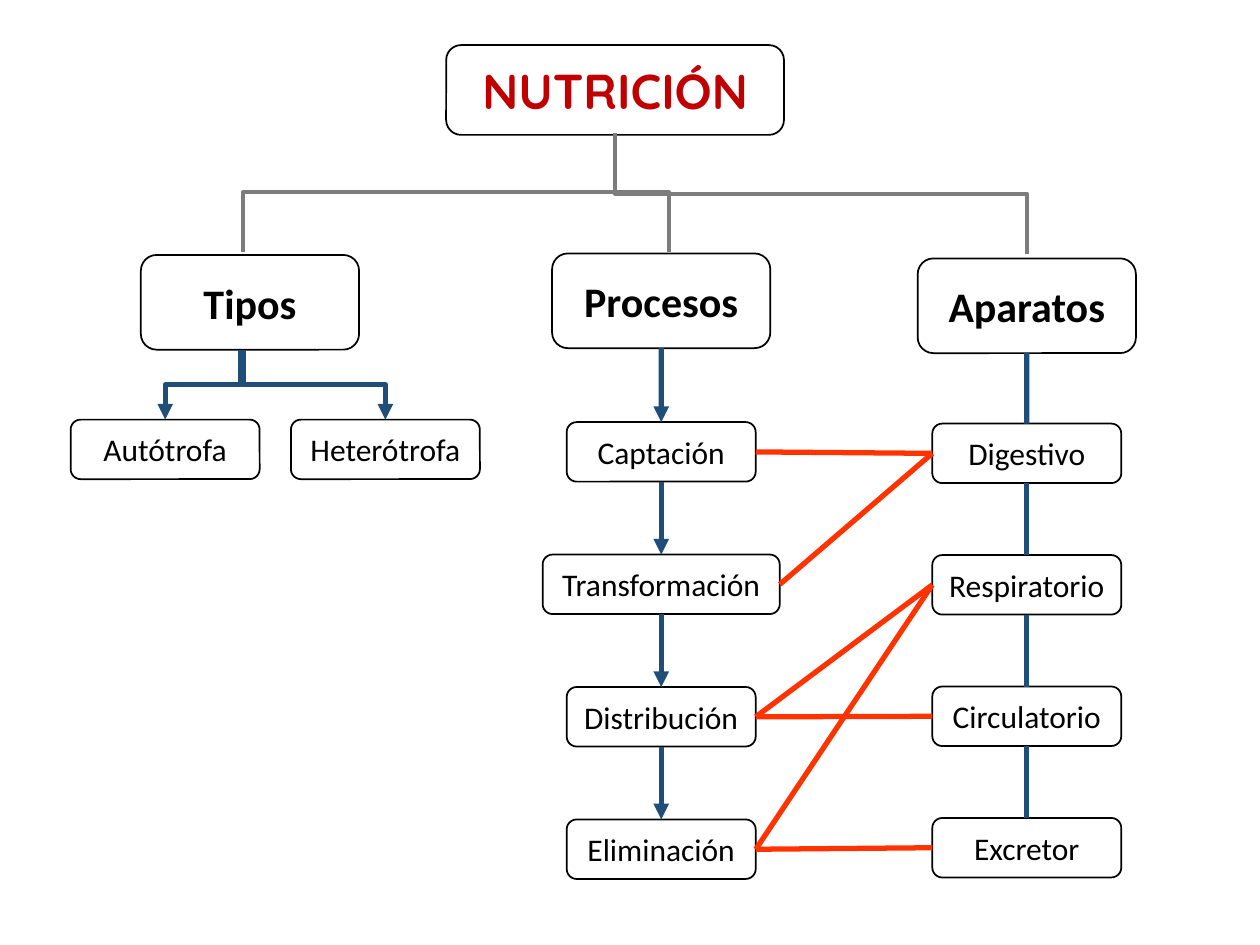
from dataclasses import dataclass
from itertools import pairwise

from lxml import etree
from pptx import Presentation
from pptx.dml.color import RGBColor
from pptx.enum.shapes import MSO_CONNECTOR, MSO_SHAPE
from pptx.enum.text import MSO_ANCHOR, PP_ALIGN
from pptx.oxml.ns import qn
from pptx.util import Cm, Pt

ROUNDED = MSO_SHAPE.ROUNDED_RECTANGLE
STRAIGHT, ELBOW = MSO_CONNECTOR.STRAIGHT, MSO_CONNECTOR.ELBOW
CENTER, MIDDLE = PP_ALIGN.CENTER, MSO_ANCHOR.MIDDLE


@dataclass(frozen=True)
class Theme:
    white: RGBColor = RGBColor.from_string("FFFFFF")
    black: RGBColor = RGBColor.from_string("000000")
    title: RGBColor = RGBColor.from_string("C00000")
    tree: RGBColor = RGBColor.from_string("7C7C7C")
    flow: RGBColor = RGBColor.from_string("1F4E79")
    relation: RGBColor = RGBColor.from_string("FF3300")
    title_font: str = "Quicksand"
    font: str = "Calibri"
    title_size: Pt = Pt(28)
    head_size: Pt = Pt(24)
    item_size: Pt = Pt(18)
    outline: Pt = Pt(1)
    thin: Pt = Pt(2.25)
    thick: Pt = Pt(3)


THEME = Theme()


def add_box(s, text, center, top, width=3.81, height=1.2, *, size=THEME.item_size,
            font=THEME.font, color=THEME.black, bold=False):
    """Rounded box centred on a column; lengths in centimetres."""
    sp = s.shapes.add_shape(ROUNDED, Cm(center - width / 2), Cm(top), Cm(width), Cm(height))
    sp.shadow.inherit = False
    sp.fill.solid()
    sp.fill.fore_color.rgb = THEME.white
    sp.line.color.rgb = THEME.black
    sp.line.width = THEME.outline
    tf = sp.text_frame
    tf.word_wrap = True
    tf.vertical_anchor = MIDDLE
    p = tf.paragraphs[0]
    p.alignment = CENTER
    r = p.add_run()
    r.text = text
    r.font.name, r.font.size, r.font.bold = font, size, bold
    r.font.color.rgb = color
    return sp


def add_head(s, text, center, top):
    return add_box(s, text, center, top, 4.4, 1.91, size=THEME.head_size, bold=True)


def style_line(c, color, width, arrow):
    c.line.color.rgb = color
    c.line.width = width
    if arrow:
        etree.SubElement(c.line._get_or_add_ln(), qn("a:tailEnd"), type="triangle")
    etree.SubElement(c._element.spPr, qn("a:effectLst"))


def add_line(s, start, end, color=THEME.flow, arrow=False):
    c = s.shapes.add_connector(STRAIGHT, *start, *end)
    style_line(c, color, THEME.thick, arrow)


def add_elbow(s, start, end, color, width, arrow=False):
    """Bent line that leaves and arrives vertically: a turned elbow connector."""
    (x1, y1), (x2, y2) = start, end
    drop, span = y2 - y1, abs(x2 - x1)
    left, top = (x1 + x2 - drop) // 2, (y1 + y2 - span) // 2
    to_right = x2 > x1
    near, far = (left + drop, left) if to_right else (left, left + drop)
    c = s.shapes.add_connector(ELBOW, near, top, far, top + span)
    c._element.spPr.get_or_add_xfrm().set("rot", str((270 if to_right else 90) * 60000))
    style_line(c, color, width, arrow)


def top_of(sp):
    return sp.left + sp.width // 2, sp.top


def bottom_of(sp):
    return sp.left + sp.width // 2, sp.top + sp.height


def left_of(sp):
    return sp.left, sp.top + sp.height // 2


def right_of(sp):
    return sp.left + sp.width, sp.top + sp.height // 2


def main():
    prs = Presentation()
    prs.slide_width, prs.slide_height = Cm(25.4), Cm(19.05)
    s = prs.slides.add_slide(prs.slide_layouts[6])

    # Title and the three branches
    title = add_box(s, "NUTRICIÓN", 12.4, 0.91, 6.81, 1.81, size=THEME.title_size,
                    font=THEME.title_font, color=THEME.title, bold=True)
    types = add_head(s, "Tipos", 5.04, 5.14)
    processes = add_head(s, "Procesos", 13.33, 5.11)
    systems = add_head(s, "Aparatos", 20.7, 5.21)
    for x, y in ((4.9, 5.08), (13.49, 5.08), (20.7, 5.13)):
        add_elbow(s, (bottom_of(title)[0], Cm(2.68)), (Cm(x), Cm(y)), THEME.tree, THEME.thin)

    # Types of nutrition
    for text, center, x in (("Autótrofa", 3.33, 4.85), ("Heterótrofa", 7.77, 4.9)):
        kind = add_box(s, text, center, 8.46)
        add_elbow(s, (Cm(x), bottom_of(types)[1]), top_of(kind),
                  THEME.flow, THEME.thick, arrow=True)

    # Processes, in order, and the systems of the body
    steps = [add_box(s, text, 13.33, 8.51 + 2.67 * i, width)
             for i, (text, width) in enumerate((("Captación", 3.81), ("Transformación", 4.78),
                                                ("Distribución", 3.81), ("Eliminación", 3.81)))]
    organs = [add_box(s, text, 20.7, 8.54 + 2.65 * i)
              for i, text in enumerate(("Digestivo", "Respiratorio", "Circulatorio", "Excretor"))]
    for column, arrow in (([processes, *steps], True), ([systems, *organs], False)):
        for upper, lower in pairwise(column):
            add_line(s, bottom_of(upper), top_of(lower), arrow=arrow)

    # Which system takes part in which process
    for step, organ in ((0, 0), (1, 0), (2, 1), (2, 2), (3, 1), (3, 3)):
        add_line(s, right_of(steps[step]), left_of(organs[organ]), THEME.relation)

    prs.save("out.pptx")


if __name__ == "__main__":
    main()
